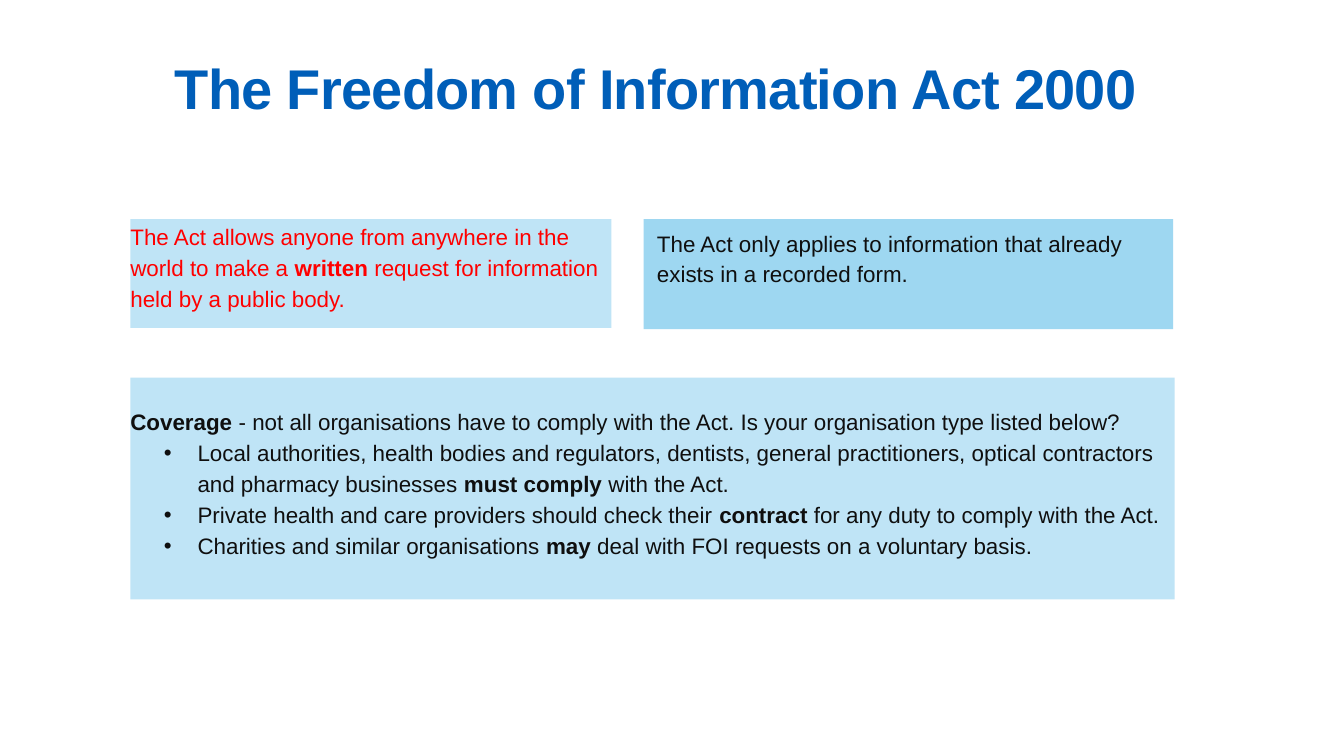
from lxml.etree import SubElement
from pptx import Presentation
from pptx.dml.color import RGBColor as RGB
from pptx.enum.shapes import MSO_SHAPE as Shape
from pptx.enum.text import MSO_ANCHOR as Anchor, PP_ALIGN as Align
from pptx.oxml.ns import qn
from pptx.util import Inches, Pt

COLORS = {
    "title": "005EB8",
    "pale": "BFE4F6",
    "sky": "9ED7F1",
    "red": "FF0000",
    "ink": "0F0F0F",
}
LEFT, TOP = 0.97, 1.63


def paint(name):
    return RGB.from_string(COLORS[name])


def add_bullet(para):
    props = para._p.get_or_add_pPr()
    props.set("marL", str(Inches(0.5)))
    props.set("indent", str(Inches(-0.25)))
    SubElement(props, qn("a:buFont"), typeface="Arial")
    SubElement(props, qn("a:buChar"), char="•")


def write(para, text, size=12, color="ink", line=1.15, bullet=False, track=0):
    if bullet:
        add_bullet(para)
    para.alignment = Align.LEFT
    para.line_spacing = line
    para.space_before = para.space_after = Pt(0)
    for i, part in enumerate(text.split("**")):
        if not part:
            continue
        run = para.add_run()
        run.text = part
        font = run.font
        font.name, font.size, font.bold = "Arial", Pt(size), i % 2 == 1
        font.color.rgb = paint(color)
        if track:
            run._r.get_or_add_rPr().set("spc", str(round(track * 100)))


def set_frame(frame, insets=(0, 0, 0, 0)):
    frame.word_wrap = True
    frame.vertical_anchor = Anchor.TOP
    (frame.margin_left, frame.margin_top,
     frame.margin_right, frame.margin_bottom) = map(Inches, insets)


def add_title(slide, box, text):
    title = slide.shapes.title
    title.left, title.top, title.width, title.height = map(Inches, box)
    set_frame(title.text_frame, insets=(0, 0.03, 0, 0))
    write(title.text_frame.paragraphs[0], f"**{text}**",
          size=30, color="title", line=1, track=-0.4)


def add_panel(slide, box, fill, text, bullets=(), color="ink", insets=(0, 0, 0, 0)):
    panel = slide.shapes.add_shape(Shape.RECTANGLE, *map(Inches, box))
    panel.shadow.inherit = False
    panel.fill.solid()
    panel.fill.fore_color.rgb = paint(fill)
    panel.line.fill.background()
    frame = panel.text_frame
    set_frame(frame, insets)
    write(frame.paragraphs[0], text, color=color)
    for item in bullets:
        write(frame.add_paragraph(), item, color=color, bullet=True)


def main():
    deck = Presentation()
    deck.slide_width = Inches(10)
    deck.slide_height = deck.slide_width * 9 // 16
    slide = deck.slides.add_slide(deck.slide_layouts[5])
    add_title(slide, (1.3, 0.37, 7.44, 0.58), "The Freedom of Information Act 2000")
    add_panel(
        slide, (LEFT, TOP, 3.58, 0.81), "pale",
        "The Act allows anyone from anywhere in the world to make a **written**"
        " request for information held by a public body.",
        color="red",
    )
    add_panel(
        slide, (LEFT, 2.81, 7.77, 1.65), "pale",
        "**Coverage** - not all organisations have to comply with the Act."
        " Is your organisation type listed below?",
        bullets=[
            "Local authorities, health bodies and regulators, dentists, general"
            " practitioners, optical contractors and pharmacy businesses"
            " **must comply **with the Act.",
            "Private health and care providers should check their **contract**"
            " for any duty to comply with the Act.",
            "Charities and similar organisations **may** deal with FOI requests"
            " on a voluntary basis.",
        ],
        insets=(0, 0.2, 0, 0),
    )
    add_panel(
        slide, (4.79, TOP, 3.94, 0.82), "sky",
        "The Act only applies to information that already exists in a recorded form.",
        insets=(0.1, 0.05, 0.1, 0.05),
    )
    deck.save("out.pptx")


if __name__ == "__main__":
    main()
